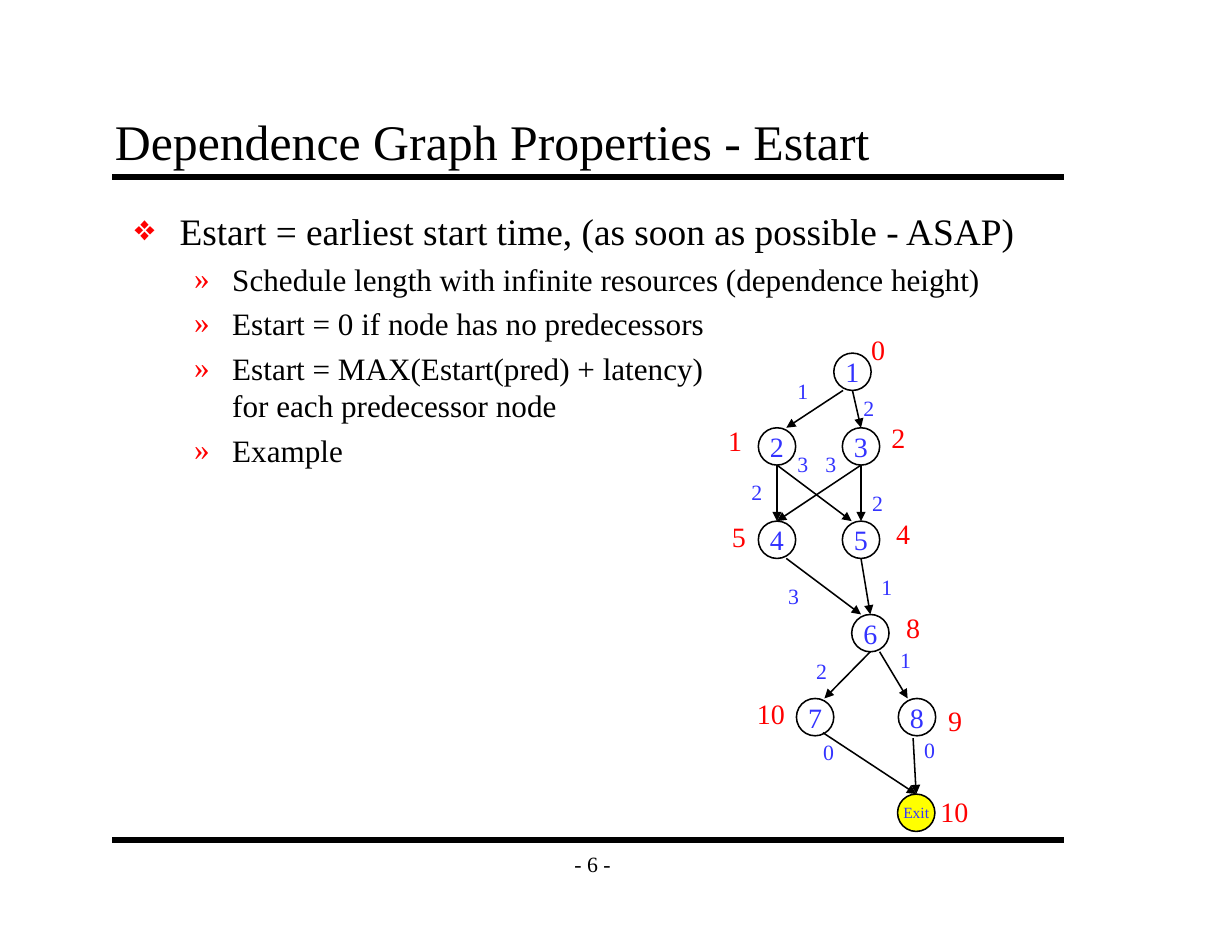
from lxml.etree import SubElement
from pptx import Presentation
from pptx.dml.color import RGBColor
from pptx.enum.shapes import MSO_CONNECTOR, MSO_SHAPE
from pptx.enum.text import MSO_ANCHOR, PP_ALIGN
from pptx.oxml.ns import qn
from pptx.util import Pt

BLACK = RGBColor(0x00, 0x00, 0x00)
RED = RGBColor(0xFF, 0x00, 0x00)
BLUE = RGBColor(0x33, 0x33, 0xFF)
YELLOW = RGBColor(0xFF, 0xFF, 0x00)
FONT = "Times New Roman"
RADIUS = 12

NODE_CENTRES = {
    "1": (548, 239), "2": (499.5, 287), "3": (553.5, 287),
    "4": (499.5, 347), "5": (553.5, 347), "6": (559.5, 407),
    "7": (524, 461), "8": (589.5, 461), "Exit": (589, 522.5),
}
ESTARTS = [
    ("0", 553, 210.5), ("1", 461, 268.5), ("2", 566, 266.5),
    ("5", 463.5, 330.5), ("4", 569, 328.5), ("8", 575.5, 389),
    ("10", 479.5, 444), ("9", 602.5, 449), ("10", 597.5, 507.5),
]
# Each edge: source, target, start offset, end shift, latency, label position.
EDGES = [
    ("1", "2", (-6, 12), 6, "1", (505.5, 239)),
    ("1", "3", (0, 12), 0, "2", (548, 250.5)),
    ("2", "5", (0, 12), -6, "3", (505.5, 286.5)),
    ("3", "4", (0, 12), 0, "3", (523.5, 286.5)),
    ("3", "5", (0, 12), 0, "2", (553.5, 311)),
    ("2", "4", (0, 12), 0, "2", (476, 304.5)),
    ("4", "6", (6, 12), -6, "3", (499.5, 371)),
    ("5", "6", (0, 12), 0, "1", (559.5, 365)),
    ("6", "8", (6, 12), -6, "1", (571.5, 412.5)),
    ("6", "7", (0, 12), 6, "2", (517.5, 419)),
    ("8", "Exit", (-2.5, 13.5), 0, "0", (587, 470)),
    ("7", "Exit", (5, 10), 0, "0", (522, 471.5)),
]
BULLETS = [
    (0, "Estart = earliest start time, (as soon as possible - ASAP)"),
    (1, "Schedule length with infinite resources (dependence height)"),
    (1, "Estart = 0 if node has no predecessors"),
    (1, "Estart = MAX(Estart(pred) + latency)\vfor each predecessor node"),
    (1, "Example"),
]
LEVELS = [
    {"size": 24, "before": 5.5, "margin": 29.5, "indent": -29.5, "mark": "❖", "scale": 75},
    {"size": 20, "before": 4.6, "margin": 63.4, "indent": -24.5, "mark": "»", "scale": 100},
]


def write_text(paragraph, text, size=18, color=BLACK, align=PP_ALIGN.LEFT):
    """Put formatted text into a paragraph."""
    paragraph.text = text
    paragraph.alignment = align
    for run in paragraph.runs:
        run.font.name = FONT
        run.font.size = Pt(size)
        run.font.color.rgb = color


def add_text_box(slide, left, top, width, height, wrap=False, anchor=MSO_ANCHOR.TOP, inset=(7.2, 3.6)):
    """Add an empty text box and return its text frame."""
    frame = slide.shapes.add_textbox(Pt(left), Pt(top), Pt(width), Pt(height)).text_frame
    frame.word_wrap = wrap
    frame.vertical_anchor = anchor
    frame.margin_left = frame.margin_right = Pt(inset[0])
    frame.margin_top = frame.margin_bottom = Pt(inset[1])
    return frame


def add_label(slide, text, left, top, size, color):
    """Add a small number beside a node or an edge."""
    frame = add_text_box(slide, left, top, 14.4 + len(text) * size / 2, size * 1.2 + 7.2)
    write_text(frame.paragraphs[0], text, size=size, color=color)


def add_line(slide, start, end, width=1, arrow=False):
    """Add a straight black line, with an arrowhead at its end if asked."""
    points = [Pt(value) for value in (*start, *end)]
    connector = slide.shapes.add_connector(MSO_CONNECTOR.STRAIGHT, *points)
    connector.line.color.rgb = BLACK
    connector.line.width = Pt(width)
    if arrow:
        SubElement(connector.line._get_or_add_ln(), qn("a:tailEnd"), type="triangle")
    SubElement(connector._element.spPr, qn("a:effectLst"))


def add_node(slide, name, x, y):
    """Add a graph node as a circle around its centre."""
    shape = slide.shapes.add_shape(
        MSO_SHAPE.OVAL, Pt(x - RADIUS), Pt(y - RADIUS), Pt(2 * RADIUS), Pt(2 * RADIUS))
    shape.shadow.inherit = False
    shape.line.color.rgb = BLACK
    shape.line.width = Pt(1)
    is_exit = name == "Exit"
    if is_exit:
        shape.fill.solid()
        shape.fill.fore_color.rgb = YELLOW
    else:
        shape.fill.background()
    frame = shape.text_frame
    frame.word_wrap = False
    frame.vertical_anchor = MSO_ANCHOR.MIDDLE
    write_text(frame.paragraphs[0], name, size=10 if is_exit else 18,
               color=BLUE, align=PP_ALIGN.CENTER)


def add_edge(slide, source, target, offset, shift, latency, label):
    """Add an arrow between two nodes with its latency."""
    x, y = NODE_CENTRES[source]
    end_x, end_y = NODE_CENTRES[target]
    add_line(slide, (x + offset[0], y + offset[1]), (end_x + shift, end_y - RADIUS), arrow=True)
    add_label(slide, latency, *label, size=14, color=BLUE)


def set_bullet(paragraph, level):
    """Give a paragraph a red bullet with a hanging indent."""
    properties = paragraph._p.get_or_add_pPr()
    properties.set("marL", str(Pt(level["margin"])))
    properties.set("indent", str(Pt(level["indent"])))
    color = SubElement(properties, qn("a:buClr"))
    SubElement(color, qn("a:srgbClr"), val=str(RED))
    SubElement(properties, qn("a:buSzPct"), val=str(level["scale"] * 1000))
    SubElement(properties, qn("a:buFont"), typeface=FONT)
    SubElement(properties, qn("a:buChar"), char=level["mark"])


def add_bullets(slide):
    """Add the two-level list of statements."""
    frame = add_text_box(slide, 78, 129.6, 606, 410.4, wrap=True, inset=(7.9, 4.3))
    for index, (depth, text) in enumerate(BULLETS):
        paragraph = frame.add_paragraph() if index else frame.paragraphs[0]
        level = LEVELS[depth]
        write_text(paragraph, text, size=level["size"])
        paragraph.level = depth
        paragraph.space_before = Pt(level["before"])
        set_bullet(paragraph, level)


def main():
    """Build the slide and save it."""
    presentation = Presentation()
    presentation.slide_width, presentation.slide_height = Pt(792), Pt(612)
    slide = presentation.slides.add_slide(presentation.slide_layouts[6])
    for y in (114, 540):
        add_line(slide, (72, y), (684, y), width=4)
    number = add_text_box(slide, 354, 540, 54, 30, anchor=MSO_ANCHOR.MIDDLE)
    write_text(number.paragraphs[0], "- 6 -", size=14, align=PP_ALIGN.CENTER)
    title = add_text_box(slide, 66, 66, 612, 48, wrap=True,
                         anchor=MSO_ANCHOR.BOTTOM, inset=(7.9, 4.3))
    write_text(title.paragraphs[0], "Dependence Graph Properties - Estart", size=32)
    add_bullets(slide)
    for name, centre in NODE_CENTRES.items():
        add_node(slide, name, *centre)
    for edge in EDGES:
        add_edge(slide, *edge)
    for text, left, top in ESTARTS:
        add_label(slide, text, left, top, size=18, color=RED)
    presentation.save("out.pptx")


if __name__ == "__main__":
    main()
